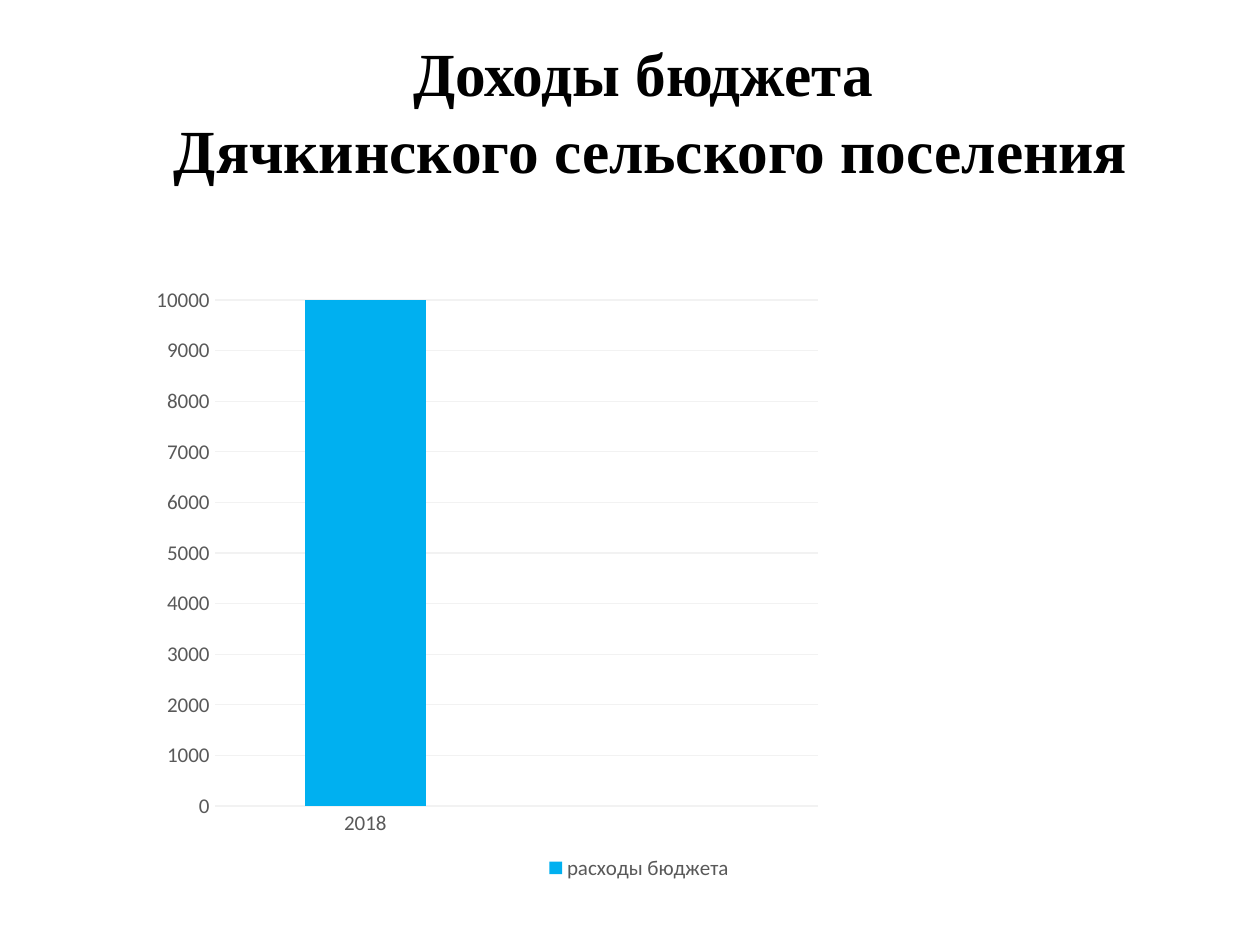
from lxml.etree import SubElement
from pptx import Presentation
from pptx.chart.data import CategoryChartData
from pptx.dml.color import RGBColor
from pptx.enum.chart import XL_CHART_TYPE, XL_LEGEND_POSITION, XL_TICK_MARK
from pptx.enum.text import MSO_ANCHOR, PP_ALIGN
from pptx.oxml.ns import qn
from pptx.util import Pt


def color(code):
    return RGBColor.from_string(code)


def style(font, code, **values):
    for key, value in values.items():
        setattr(font, key, value)
    font.color.rgb = color(code)


deck = Presentation()
deck.slide_width, deck.slide_height = Pt(720), Pt(540)
slide = deck.slides.add_slide(deck.slide_layouts[5])

# Title
title = slide.shapes.title
place = {"left": 48, "top": 18, "width": 648, "height": 90}
for key, value in place.items():
    setattr(title, key, Pt(value))
frame = title.text_frame
frame.word_wrap = True
frame.vertical_anchor = MSO_ANCHOR.MIDDLE
frame.text = "Доходы бюджета \nДячкинского сельского поселения"
for para in frame.paragraphs:
    para.alignment = PP_ALIGN.CENTER
    para.space_before = Pt(2)
    style(para.runs[0].font, "000000", name="Times New Roman", size=Pt(35), bold=True)

# Budget chart: the bar runs past the top of the axis
data = CategoryChartData()
data.categories = ["2018", ""]
data.add_series("расходы бюджета", [12000, None])
chart = slide.shapes.add_chart(
    XL_CHART_TYPE.COLUMN_CLUSTERED, Pt(46), Pt(157.5), Pt(638.5), Pt(348.5), data
).chart
chart.has_title = False
style(chart.font, "000000", name="Calibri", size=Pt(10))
plot = chart.plots[0]
plot.gap_width = 150
plot.vary_by_categories = False
fill = plot.series[0].format.fill
fill.solid()
fill.fore_color.rgb = color("00B0F0")

# Axes and legend
chart.has_legend = True
legend = chart.legend
legend.position = XL_LEGEND_POSITION.BOTTOM
legend.include_in_layout = False
cat, val = chart.category_axis, chart.value_axis
for axis in (cat, val):
    axis.major_tick_mark = axis.minor_tick_mark = XL_TICK_MARK.NONE
    axis.format.line.fill.background()
for font in (cat.tick_labels.font, val.tick_labels.font, legend.font):
    style(font, "595959", name="Calibri", size=Pt(12))
val.minimum_scale, val.maximum_scale, val.major_unit = 0, 10000, 1000
val.has_major_gridlines = True
grid = val.major_gridlines.format.line
grid.width = Pt(0.75)
grid.color.rgb = color("F2F2F2")

# Fixed plot area, leaving the right third free
area = plot._element.getparent()
layout = area.find(qn("c:layout"))
if layout is None:
    layout = SubElement(area, qn("c:layout"))
    area.insert(0, layout)
manual = SubElement(layout, qn("c:manualLayout"))
parts = {"layoutTarget": "inner", "xMode": "edge", "yMode": "edge",
         "x": 0.12, "y": 0.04, "w": 0.54, "h": 0.83}
for key, value in parts.items():
    SubElement(manual, qn("c:" + key)).set("val", str(value))

deck.save("out.pptx")
